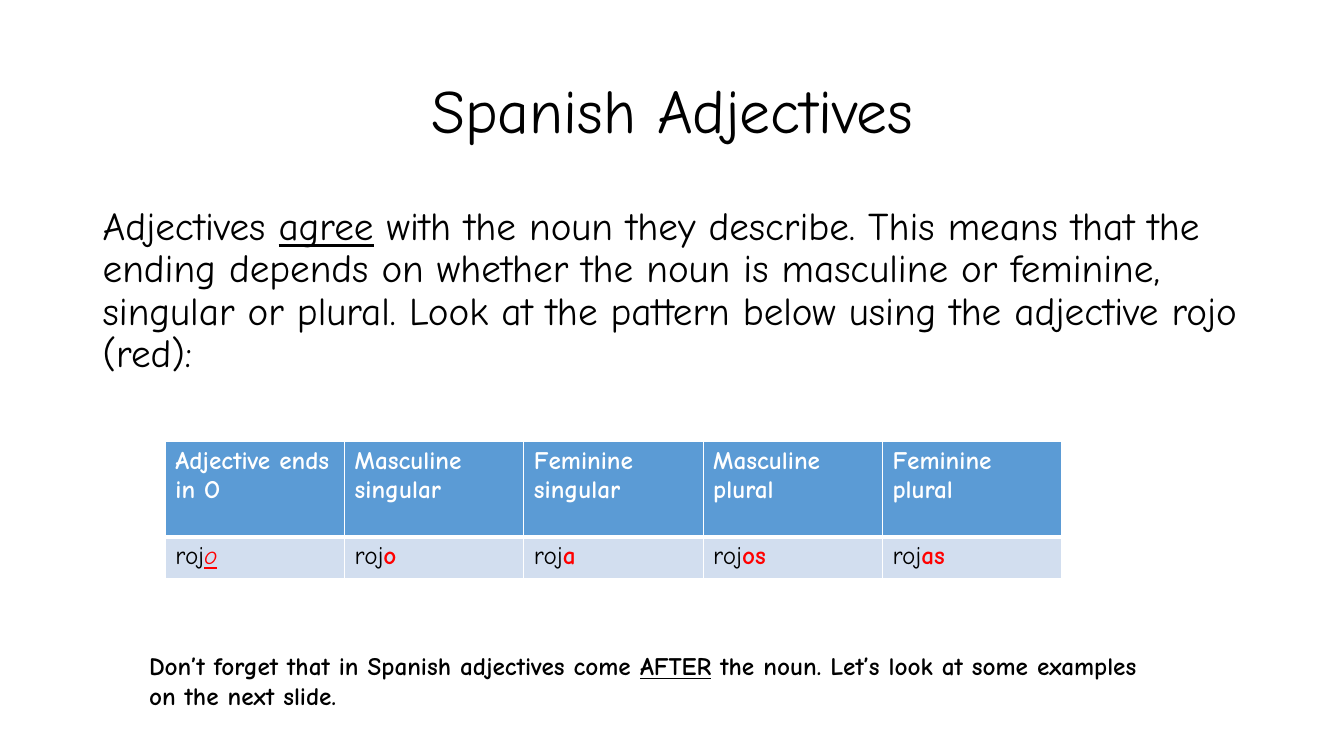
from dataclasses import dataclass

from lxml.etree import SubElement
from pptx import Presentation
from pptx.dml.color import RGBColor as Color
from pptx.enum.text import MSO_ANCHOR as Anchor, PP_ALIGN as Align
from pptx.oxml.ns import qn
from pptx.util import Inches, Pt


@dataclass(frozen=True)
class Theme:
    font: str = "Comic Neue"
    black: str = "000000"
    white: str = "FFFFFF"
    red: str = "FF0000"
    header: str = "5B9BD5"
    band: str = "D2DEEF"
    title: int = 44
    body: int = 28
    small: int = 18


theme = Theme()


def add_span(para, text, size=theme.small, color=theme.black, bold=False, italic=False, underline=False):
    span = para.add_run()
    span.text = text
    span.font.name = theme.font
    span.font.size = Pt(size)
    span.font.color.rgb = Color.from_string(color)
    span.font.bold = bold
    span.font.italic = italic
    span.font.underline = underline


def style_cell(cell, fill, bottom):
    cell.fill.solid()
    cell.fill.fore_color.rgb = Color.from_string(fill)
    properties = cell._tc.get_or_add_tcPr()
    widths = {"a:lnL": 1, "a:lnR": 1, "a:lnT": 1, "a:lnB": bottom}
    for position, (side, width) in enumerate(widths.items()):
        line = SubElement(properties, qn(side), w=str(Pt(width)))
        SubElement(SubElement(line, qn("a:solidFill")), qn("a:srgbClr"), val=theme.white)
        properties.insert(position, line)


deck = Presentation()
deck.slide_width = Inches(13.33)
deck.slide_height = Inches(7.5)
page = deck.slides.add_slide(deck.slide_layouts[6])

title_box = page.shapes.add_textbox(Inches(0.92), Inches(0.4), Inches(11.5), Inches(1.45))
title_box.text_frame.word_wrap = True
title_box.text_frame.vertical_anchor = Anchor.MIDDLE
para = title_box.text_frame.paragraphs[0]
para.alignment = Align.CENTER
para.line_spacing = 0.9
add_span(para, "Spanish Adjectives", size=theme.title)

body_box = page.shapes.add_textbox(Inches(0.92), Inches(2), Inches(11.5), Inches(4.76))
body_box.text_frame.word_wrap = True
para = body_box.text_frame.paragraphs[0]
para.line_spacing = 0.9
para.space_before = Pt(10)
add_span(para, "Adjectives ", size=theme.body)
add_span(para, "agree", size=theme.body, underline=True)
add_span(
    para,
    " with the noun they describe. This means that the ending depends on whether the noun is "
    "masculine or feminine, singular or plural. Look at the pattern below using the adjective rojo (red):",
    size=theme.body,
)

emphasis = {"bold": True}
columns = [
    (["Adjective ends in O"], "o", {"italic": True, "underline": True}),
    (["Masculine singular"], "o", emphasis),
    (["Feminine singular"], "a", emphasis),
    (["Masculine plural"], "os", emphasis),
    (["Feminine", "plural"], "as", emphasis),
]
table = page.shapes.add_table(
    2, len(columns), Inches(1.64), Inches(4.38), Inches(8.89), Inches(1.36)
).table
table.rows[0].height = Inches(0.95)
table.rows[1].height = Inches(0.41)
for index, (heading, ending, ending_format) in enumerate(columns):
    header_cell, example_cell = table.cell(0, index), table.cell(1, index)
    style_cell(header_cell, theme.header, bottom=3)
    style_cell(example_cell, theme.band, bottom=1)
    frame = header_cell.text_frame
    for number, words in enumerate(heading):
        para = frame.add_paragraph() if number else frame.paragraphs[0]
        add_span(para, words, color=theme.white, bold=True)
    para = example_cell.text_frame.paragraphs[0]
    add_span(para, "roj")
    add_span(para, ending, color=theme.red, **ending_format)

reminder_box = page.shapes.add_textbox(Inches(1.38), Inches(6.4), Inches(10.07), Inches(0.71))
reminder_box.text_frame.word_wrap = True
para = reminder_box.text_frame.paragraphs[0]
add_span(para, "Don’t forget that in Spanish adjectives come ", bold=True)
add_span(para, "AFTER", bold=True, underline=True)
add_span(para, " the noun. Let’s look at some examples on the next slide.", bold=True)

deck.save("out.pptx")
